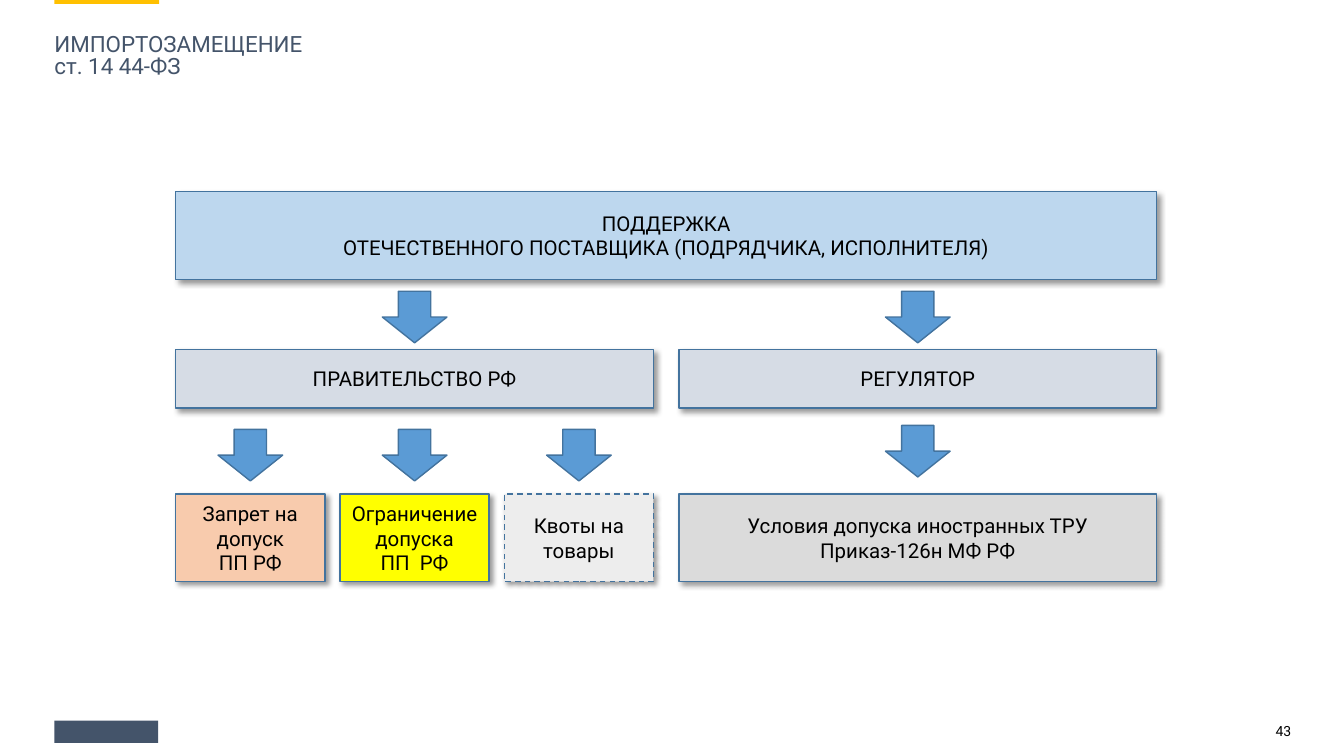
from dataclasses import dataclass

from lxml import etree
from pptx import Presentation
from pptx.dml.color import RGBColor
from pptx.enum.dml import MSO_LINE
from pptx.enum.shapes import MSO_SHAPE
from pptx.enum.text import MSO_ANCHOR, MSO_AUTO_SIZE, PP_ALIGN
from pptx.oxml.ns import qn
from pptx.util import Cm, Pt

RECT, DOWN_ARROW = MSO_SHAPE.RECTANGLE, MSO_SHAPE.DOWN_ARROW
LEFT, CENTER, RIGHT = PP_ALIGN.LEFT, PP_ALIGN.CENTER, PP_ALIGN.RIGHT
TOP, MIDDLE = MSO_ANCHOR.TOP, MSO_ANCHOR.MIDDLE
DASH = MSO_LINE.DASH
TITLE_ONLY = 5


@dataclass(frozen=True)
class Theme:
    font: str = "Roboto"
    title_size: float = 16
    box_size: float = 14.6
    number_size: float = 10
    text: str = "000000"
    dark: str = "44546A"
    accent: str = "FFC000"
    outline: str = "43739E"
    arrow: str = "5B9BD5"
    support: str = "BDD7EE"
    authority: str = "D6DCE5"
    ban: str = "F8CBAD"
    limit: str = "FFFF00"
    quota: str = "EDEDED"
    terms: str = "DBDBDB"


@dataclass(frozen=True)
class Box:
    """A rectangle in centimetres."""
    x: float
    y: float
    w: float
    h: float

    def emu(self):
        return Cm(self.x), Cm(self.y), Cm(self.w), Cm(self.h)

    def columns(self, count, gap):
        w = (self.w - gap * (count - 1)) / count
        return [Box(self.x + i * (w + gap), self.y, w, self.h) for i in range(count)]


THEME = Theme()


def format_text(tf, size, color, align, anchor):
    tf.word_wrap = True
    tf.vertical_anchor = anchor
    for p in tf.paragraphs:
        p.alignment = align
        for r in p.runs:
            r.font.name = THEME.font
            r.font.size = Pt(size)
            r.font.color.rgb = RGBColor.from_string(color)


def clear_margins(tf):
    tf.margin_left = tf.margin_right = tf.margin_top = tf.margin_bottom = 0


def add_figure(slide, kind, box, fill, line=None):
    sp = slide.shapes.add_shape(kind, *box.emu())
    sp.shadow.inherit = False
    sp.fill.solid()
    sp.fill.fore_color.rgb = RGBColor.from_string(fill)
    if line:
        sp.line.color.rgb = RGBColor.from_string(line)
        sp.line.width = Pt(1)
    else:
        sp.line.fill.background()
    return sp


def add_drop_shadow(sp):
    effects = sp._element.spPr.find(qn("a:effectLst"))
    shadow = etree.SubElement(effects, qn("a:outerShdw"), blurRad=str(Pt(4)),
                              dist=str(Pt(3)), dir="2700000", algn="tl", rotWithShape="0")
    color = etree.SubElement(shadow, qn("a:srgbClr"), val="000000")
    etree.SubElement(color, qn("a:alpha"), val="40000")


def add_block(slide, box, text, fill, dash=None):
    sp = add_figure(slide, RECT, box, fill, THEME.outline)
    add_drop_shadow(sp)
    if dash:
        sp.line.dash_style = dash
    sp.text_frame.text = text
    format_text(sp.text_frame, THEME.box_size, THEME.text, CENTER, MIDDLE)


def add_arrow_to(slide, box, rise):
    """Centre a down arrow over the box, starting rise cm above its top."""
    w, h = 1.63, 1.3
    arrow = Box(box.x + (box.w - w) / 2, box.y - rise, w, h)
    add_figure(slide, DOWN_ARROW, arrow, THEME.arrow, THEME.outline)


def add_header(slide, box):
    add_figure(slide, RECT, Box(box.x, 0, 2.64, 0.1), THEME.accent)
    title = slide.shapes.title
    title.left, title.top, title.width, title.height = box.emu()
    tf = title.text_frame
    tf.text = "ИМПОРТОЗАМЕЩЕНИЕ\vст. 14 44-ФЗ"
    tf.auto_size = MSO_AUTO_SIZE.NONE
    clear_margins(tf)
    format_text(tf, THEME.title_size, THEME.dark, LEFT, TOP)
    tf.paragraphs[0].line_spacing = 0.8


def add_scheme(slide, box):
    support = Box(box.x, box.y, box.w, 2.21)
    government, regulator = Box(box.x, box.y + 3.98, box.w, 1.47).columns(2, 0.64)
    bottom_y = box.y + box.h - 2.21
    measures = Box(government.x, bottom_y, government.w, 2.21).columns(3, 0.38)
    terms = Box(regulator.x, bottom_y, regulator.w, 2.21)

    add_block(slide, support,
              "ПОДДЕРЖКА\nОТЕЧЕСТВЕННОГО ПОСТАВЩИКА (ПОДРЯДЧИКА, ИСПОЛНИТЕЛЯ)", THEME.support)
    for authority, name in ((government, "ПРАВИТЕЛЬСТВО РФ"), (regulator, "РЕГУЛЯТОР")):
        add_arrow_to(slide, authority, 1.47)
        add_block(slide, authority, name, THEME.authority)

    contents = (
        ("Запрет на допуск\nПП РФ", THEME.ban, None),
        ("Ограничение допуска\nПП  РФ", THEME.limit, None),
        ("Квоты на товары", THEME.quota, DASH),
    )
    for measure, (text, fill, dash) in zip(measures, contents):
        add_arrow_to(slide, measure, 1.63)
        add_block(slide, measure, text, fill, dash)
    add_arrow_to(slide, terms, 1.73)
    add_block(slide, terms, "Условия допуска иностранных ТРУ\nПриказ-126н МФ РФ", THEME.terms)


def add_footer(slide, box):
    add_figure(slide, RECT, Box(box.x, box.y, 2.62, 0.56), THEME.dark)
    number_w = 4.72
    number = Box(box.x + box.w - number_w, box.y + 0.1, number_w, box.h - 0.1)
    tf = slide.shapes.add_textbox(*number.emu()).text_frame
    tf.text = "43"
    clear_margins(tf)
    format_text(tf, THEME.number_size, THEME.text, RIGHT, TOP)
    tf.paragraphs[0].line_spacing = 0.9


def main():
    prs = Presentation()
    prs.slide_width, prs.slide_height = Cm(33.87), Cm(19.05)
    slide = prs.slides.add_slide(prs.slide_layouts[TITLE_ONLY])
    add_header(slide, Box(1.37, 0.89, 31.17, 3.63))
    add_scheme(slide, Box(4.43, 4.83, 24.72, 9.83))
    add_footer(slide, Box(1.37, 18.16, 31.17, 0.89))
    prs.save("out.pptx")


if __name__ == "__main__":
    main()
